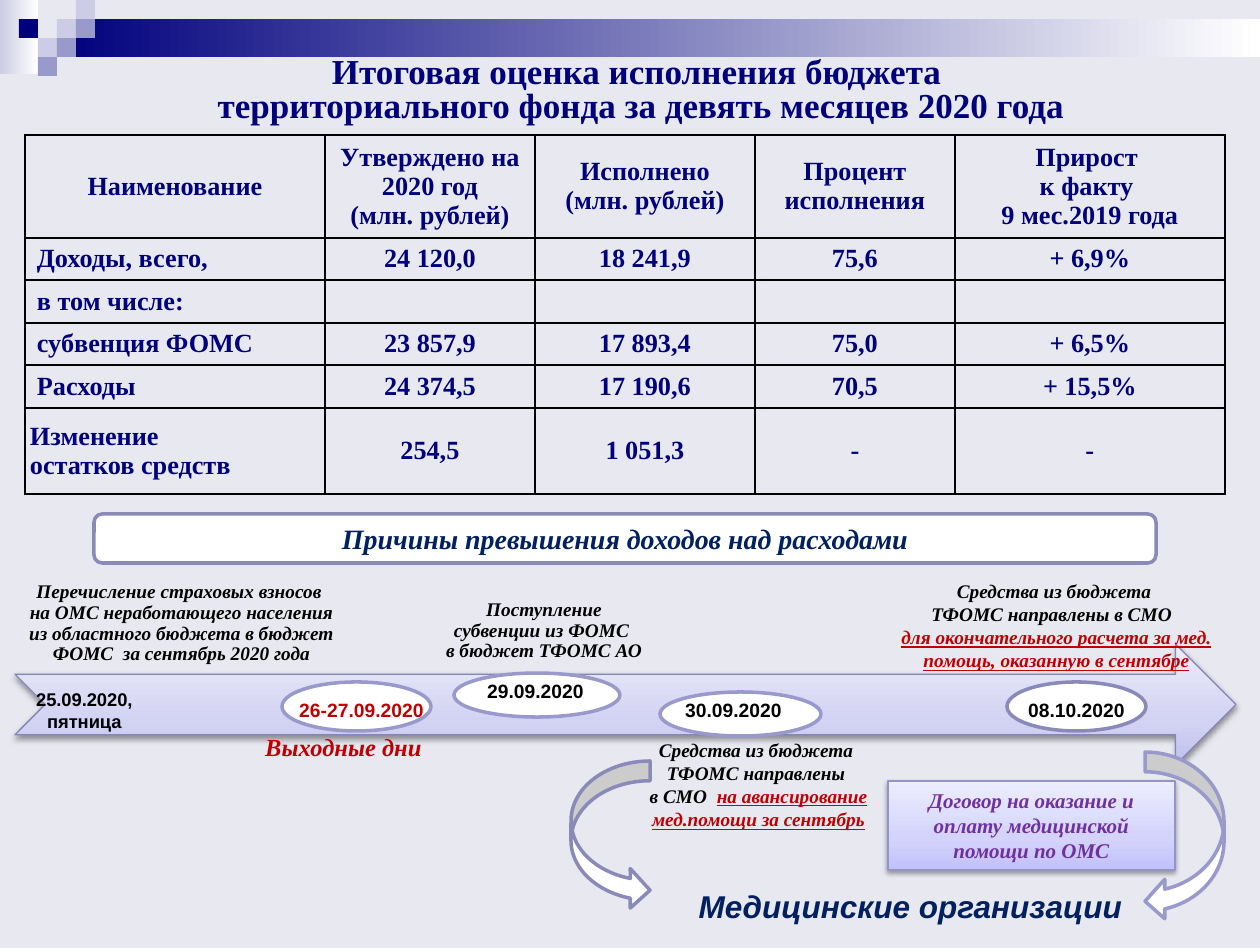
from dataclasses import dataclass

from lxml import etree
from pptx import Presentation
from pptx import util as u
from pptx.dml.color import RGBColor
from pptx.enum import shapes, text
from pptx.oxml import ns

SCALE = u.Inches(1) / 126
KIND = shapes.MSO_SHAPE
ALIGN = text.PP_ALIGN
ANCHOR = text.MSO_ANCHOR


@dataclass(frozen=True)
class Theme:
    serif: str = "Times New Roman"
    sans: str = "Arial"
    background: str = "E8E8F1"
    navy: str = "00007D"
    ink: str = "002060"
    red: str = "C00000"
    purple: str = "7030A0"
    black: str = "000000"
    white: str = "FFFFFF"
    pale: str = "CCCCE6"
    lilac: str = "9999CC"
    violet: str = "8A8AB9"
    arrow: tuple = ((0, "BFBFF0"), (35, "D2D2F3"), (100, "EDEDFB"))
    contract: tuple = ((0, "C1C1FB"), (35, "D3D3FB"), (100, "EDEDFF"))
    title_size: float = 20
    banner_size: float = 16
    table_size: float = 15
    note_size: float = 11


THEME = Theme()


def px(*lengths):
    return [round(length * SCALE) for length in lengths]


def rgb(color):
    return RGBColor.from_string(color)


def child(parent, tag, **attributes):
    return etree.SubElement(parent, ns.qn(tag), attributes)


def set_font(paragraph, size, color, name=THEME.serif, italic=False):
    font = paragraph.font
    font.name, font.size = name, u.Pt(size)
    font.bold, font.italic = True, italic
    font.color.rgb = rgb(color)


def write(frame, content, size, color, name=THEME.serif, italic=False,
          anchor=ANCHOR.TOP, spacing=None, align=ALIGN.CENTER):
    frame.text = content
    frame.word_wrap = True
    frame.vertical_anchor = anchor
    for paragraph in frame.paragraphs:
        paragraph.alignment = align
        paragraph.line_spacing = spacing
        set_font(paragraph, size, color, name, italic)


def set_gradient(fill, stops, angle=0):
    fill.gradient()
    fill.gradient_angle = angle
    stop_list = fill._xPr.find(".//" + ns.qn("a:gsLst"))
    for stop in list(stop_list):
        stop_list.remove(stop)
    for position, color in stops:
        stop = child(stop_list, "a:gs", pos=str(position * 1000))
        child(stop, "a:srgbClr", val=color)


def add_shape(slide, kind, box, fill, line=None, width=2, angle=0):
    shape = slide.shapes.add_shape(kind, *px(*box))
    shape.shadow.inherit = False
    if isinstance(fill, str):
        shape.fill.solid()
        shape.fill.fore_color.rgb = rgb(fill)
    else:
        set_gradient(shape.fill, fill, angle)
    if line:
        shape.line.color.rgb = rgb(line)
        shape.line.width = u.Pt(width)
    else:
        shape.line.fill.background()
    return shape


def add_shadow(shape):
    effects = shape._element.spPr.find(ns.qn("a:effectLst"))
    shadow = child(effects, "a:outerShdw", blurRad=str(u.Pt(3.1)), dist=str(u.Pt(1.6)),
                   dir="5400000", rotWithShape="0")
    color = child(shadow, "a:srgbClr", val=THEME.black)
    child(color, "a:alpha", val="38000")


def add_text(slide, box, content, size=THEME.note_size, color=THEME.black, margin=None,
             highlight=None, **style):
    frame = slide.shapes.add_textbox(*px(*box)).text_frame
    if margin is not None:
        frame.margin_left, frame.margin_top, frame.margin_right, frame.margin_bottom = px(*[margin] * 4)
    write(frame, content, size, color, **style)
    if highlight:
        run = frame.paragraphs[-1].add_run()
        run.text = highlight
        run.font.underline = True
        run.font.color.rgb = rgb(THEME.red)


def add_header(slide):
    add_shape(slide, KIND.RECTANGLE, (0, 0, 38, 74), ((0, THEME.pale), (100, THEME.white)))
    add_shape(slide, KIND.RECTANGLE, (57, 19, 1203, 38), ((0, THEME.navy), (100, THEME.white)))
    step = 19
    mosaic = {
        THEME.pale: [(3, 1), (4, 0), (2, 2)],
        THEME.lilac: [(4, 1), (3, 2), (2, 3)],
        THEME.navy: [(1, 1)],
    }
    for color, places in mosaic.items():
        for column, row in places:
            add_shape(slide, KIND.RECTANGLE, (column * step, row * step, step, step), color)


def add_title(slide):
    title = slide.shapes.title
    title.left, title.top, title.width, title.height = px(74, 67, 1134, 49)
    write(title.text_frame,
          "Итоговая оценка исполнения бюджета \vтерриториального фонда за девять месяцев 2020 года",
          THEME.title_size, THEME.navy, anchor=ANCHOR.MIDDLE, spacing=0.8)
    title.text_frame.auto_size = text.MSO_AUTO_SIZE.NONE


def format_cell(cell, content, align, margins):
    cell.margin_left, cell.margin_top, cell.margin_right, cell.margin_bottom = px(*margins * 2)
    write(cell.text_frame, content, THEME.table_size, THEME.navy, align=align)
    cell.vertical_anchor = ANCHOR.MIDDLE
    properties = cell._tc.get_or_add_tcPr()
    for side in ("a:lnL", "a:lnR", "a:lnT", "a:lnB"):
        border = child(properties, side, w=str(u.Pt(1)))
        child(child(border, "a:solidFill"), "a:srgbClr", val=THEME.black)
    cell.fill.background()


def add_budget_table(slide):
    rows = [
        ["Наименование", "Утверждено на 2020 год\n(млн. рублей)", "Исполнено\n(млн. рублей)",
         "Процент исполнения", "Прирост \nк факту \n9 мес.2019 года"],
        ["Доходы, всего,", "24 120,0", "18 241,9", "75,6", "+ 6,9%"],
        ["в том числе:", "", "", "", ""],
        ["субвенция ФОМС", "23 857,9", "17 893,4", "75,0", "+ 6,5%"],
        ["Расходы", "24 374,5", "17 190,6", "70,5", "+ 15,5%"],
        ["Изменение \nостатков средств ", "254,5", "1 051,3", "-", "-"],
    ]
    widths = [300, 210, 220, 200, 270]
    heights = [103, 42, 43, 42, 43, 86]
    frame = slide.shapes.add_table(len(rows), len(widths), *px(25, 135, sum(widths), sum(heights)))
    table = frame.table
    table.first_row = table.horz_banding = False
    for column, width in zip(table.columns, px(*widths)):
        column.width = width
    for index, (row, height) in enumerate(zip(table.rows, px(*heights))):
        row.height = height
        for place, cell in enumerate(row.cells):
            label = place == 0 and index > 0
            margins = (5, 0) if label and index == len(rows) - 1 else (12, 6 if index == 0 else 0)
            format_cell(cell, rows[index][place], ALIGN.LEFT if label else ALIGN.CENTER, margins)


def add_timeline(slide):
    arrow = add_shape(slide, KIND.NOTCHED_RIGHT_ARROW, (15, 644, 1221, 121), THEME.arrow,
                      "8686B6", 0.75, angle=90)
    add_shadow(arrow)
    note = dict(italic=True, anchor=ANCHOR.BOTTOM, spacing=0.9, margin=11)
    add_text(slide, (15, 583, 333, 93),
             "Перечисление страховых взносов \vна ОМС неработающего населения "
             "из областного бюджета в бюджет ФОМС  за сентябрь 2020 года", **note)
    add_text(slide, (432, 602, 224, 71),
             "Поступление субвенции из ФОМС \vв бюджет ТФОМС АО", **note)
    add_text(slide, (203, 722, 281, 39), "Выходные дни", 14, THEME.red, 14, italic=True, spacing=0.9)
    add_text(slide, (15, 682, 139, 59), "25.09.2020,\nпятница", 10.5, name=THEME.sans)
    dates = [
        ("26-27.09.2020", THEME.red, (282, 682, 149, 49), THEME.lilac, (282, 692, 159, 37)),
        ("29.09.2020", THEME.black, (454, 673, 166, 44), THEME.lilac, (471, 673, 129, 37)),
        ("30.09.2020", THEME.black, (660, 692, 161, 44), THEME.lilac, (669, 692, 129, 37)),
        ("08.10.2020", THEME.black, (1007, 682, 139, 49), THEME.violet, (1007, 692, 139, 37)),
    ]
    for date, color, oval, line, box in dates:
        add_shape(slide, KIND.OVAL, oval, THEME.white, line)
        add_text(slide, box, date, color=color, name=THEME.sans)
    add_text(slide, (610, 732, 297, 106), "Средства из бюджета \vТФОМС направлены \vв СМО  ",
             highlight="на авансирование мед.помощи за сентябрь", italic=True)
    add_text(slide, (878, 573, 357, 106), "Средства из бюджета \vТФОМС направлены в СМО  \v",
             highlight="для окончательного расчета за мед. помощь, оказанную в сентябре", italic=True)


def add_banner(slide):
    banner = add_shape(slide, KIND.ROUNDED_RECTANGLE, (94, 514, 1062, 49), THEME.white, THEME.violet)
    write(banner.text_frame, "Причины превышения доходов над расходами", THEME.banner_size,
          THEME.ink, italic=True, anchor=ANCHOR.MIDDLE)


def add_recipients(slide):
    contract = add_shape(slide, KIND.RECTANGLE, (888, 781, 287, 89), THEME.contract,
                         "9494C9", 0.75, angle=90)
    add_shadow(contract)
    write(contract.text_frame, "Договор на оказание и оплату медицинской помощи по ОМС", 12,
          THEME.purple, italic=True)
    add_text(slide, (620, 881, 581, 50), "Медицинские организации", 18, THEME.ink,
             name=THEME.sans, italic=True)
    add_shape(slide, KIND.CURVED_RIGHT_ARROW, (571, 761, 79, 149), THEME.white, THEME.violet)
    add_shape(slide, KIND.CURVED_LEFT_ARROW, (1145, 752, 79, 169), THEME.white, THEME.lilac)


def main():
    presentation = Presentation()
    presentation.slide_width, presentation.slide_height = px(1260, 948)
    slide = presentation.slides.add_slide(presentation.slide_layouts[5])
    slide.background.fill.solid()
    slide.background.fill.fore_color.rgb = rgb(THEME.background)
    for add_part in (add_header, add_title, add_budget_table, add_timeline, add_banner, add_recipients):
        add_part(slide)
    presentation.save("out.pptx")


if __name__ == "__main__":
    main()
